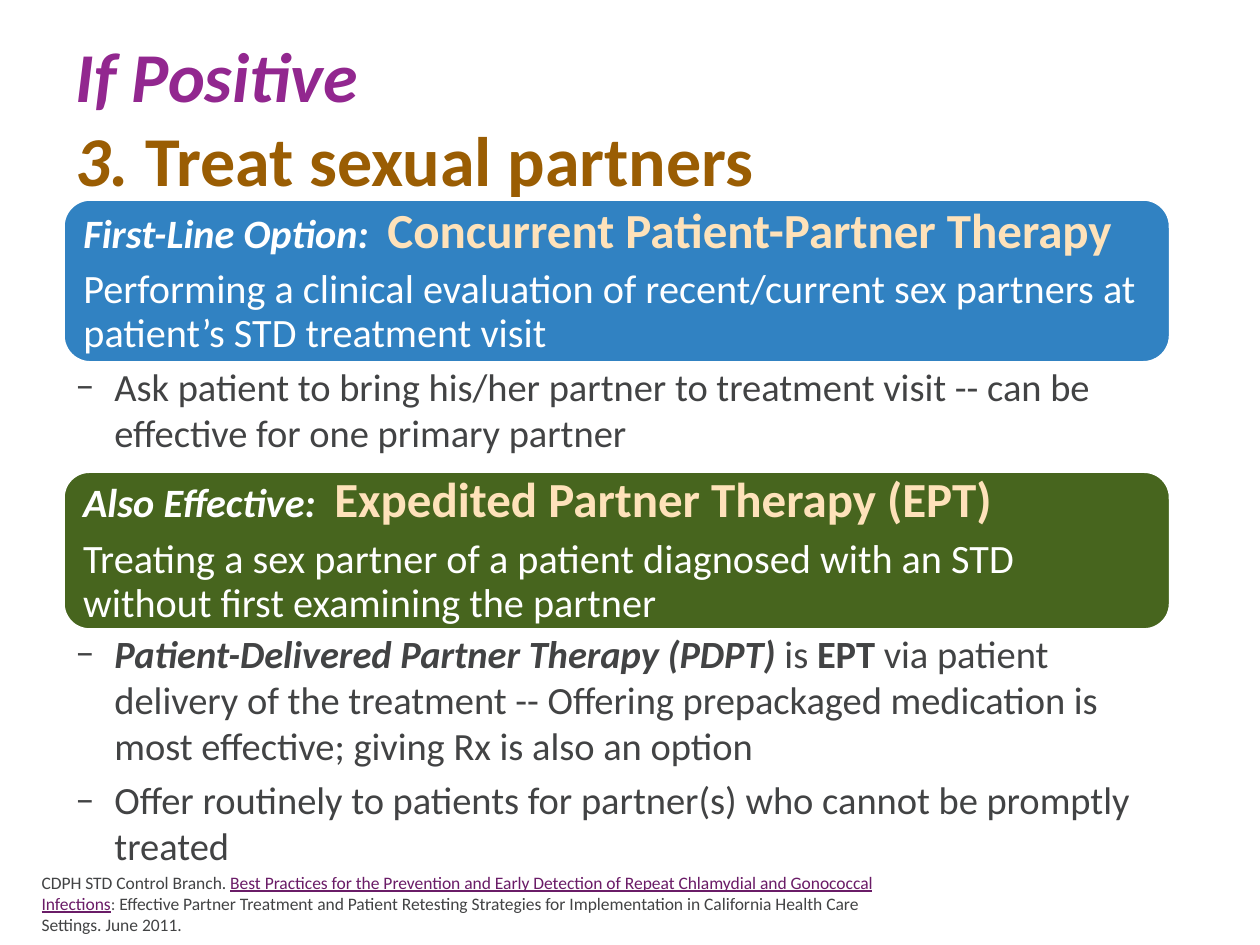
import pptx
import pptx.dml.color
import pptx.enum.shapes
import pptx.enum.text
import pptx.oxml.ns
import pptx.util
from lxml import etree

PX = 9144  # EMU per px, 100 px to the inch
ANCHOR = pptx.enum.text.MSO_ANCHOR
BODY, WHITE, CREAM, BROWN = "424344", "FFFFFF", "FEE2BA", "9A5D03"
BLUE, GREEN, PURPLE = "1B75BC", "47651E", "92278F"
CITED, CITED_COLON = "6A1C67", "595959"


def rgb(color):
    return pptx.dml.color.RGBColor.from_string(color)


def sub(parent, tag, **attributes):
    return etree.SubElement(parent, pptx.oxml.ns.qn(tag), attributes)


def apply(target, formats):
    for name, value in formats.items():
        setattr(target, name, value)


class Deck:
    font_name = "Calibri"

    def __init__(self, width, height):
        self.prs = pptx.Presentation()
        apply(self.prs, {"slide_width": width * PX, "slide_height": height * PX})
        self.slide = self.prs.slides.add_slide(self.prs.slide_layouts[6])

    def frame(self, shape, inset, anchor=ANCHOR.TOP):
        frame = shape.text_frame
        x, y = (side * PX for side in inset)
        apply(frame, {"word_wrap": True, "vertical_anchor": anchor,
                      "margin_left": x, "margin_right": x,
                      "margin_top": y, "margin_bottom": y})
        return frame

    def paragraph(self, frame, runs, first, **formats):
        """Add one paragraph; runs are (text, size, color, other font values)."""
        para = frame.paragraphs[0] if first else frame.add_paragraph()
        apply(para, {"alignment": pptx.enum.text.PP_ALIGN.LEFT, **formats})
        for text, size, color, style in runs:
            lines = text.split("\n")
            for number, line in enumerate(lines):
                if number:
                    para.add_line_break()
                if line:
                    run = para.add_run()
                    run.text = line
                    apply(run.font, {"name": self.font_name,
                                     "size": pptx.util.Pt(size), **style})
                    run.font.color.rgb = rgb(color)
        return para

    def text(self, box, runs, inset=(10, 5), anchor=ANCHOR.TOP):
        shape = self.slide.shapes.add_textbox(*(side * PX for side in box))
        self.paragraph(self.frame(shape, inset, anchor), runs, first=True)

    def dashes(self, box, items):
        shape = self.slide.shapes.add_textbox(*(side * PX for side in box))
        frame = self.frame(shape, (10, 5))
        for number, runs in enumerate(items):
            para = self.paragraph(frame, runs, first=number == 0)
            if number:
                para.space_before = pptx.util.Pt(4.4)
            props = para._p.get_or_add_pPr()
            props.set("marL", str(81 * PX))
            props.set("indent", str(-31 * PX))
            sub(props, "a:buFont", typeface=self.font_name)
            sub(props, "a:buChar", char="–")

    def banner(self, top, height, color, label, option, meaning, opacity=100):
        shape = self.slide.shapes.add_shape(
            pptx.enum.shapes.MSO_SHAPE.ROUNDED_RECTANGLE,
            50 * PX, top * PX, 879 * PX, height * PX)
        shape.shadow.inherit = False
        shape.fill.solid()
        shape.fill.fore_color.rgb = rgb(color)
        if opacity < 100:
            fill = shape._element.spPr.find(".//" + pptx.oxml.ns.qn("a:srgbClr"))
            sub(fill, "a:alpha", val=str(opacity * 1000))
        shape.line.color.rgb = rgb(WHITE)
        shape.line.width = pptx.util.Pt(2)
        frame = self.frame(shape, (10, 10), ANCHOR.MIDDLE)
        heading = [(label + "  ", 23, WHITE, {"bold": True, "italic": True}),
                   (option, 28, CREAM, {"bold": True})]
        for number, runs in enumerate([heading, [(meaning, 23, WHITE, {})]]):
            self.paragraph(frame, runs, first=number == 0, line_spacing=0.9,
                           space_after=pptx.util.Pt(6))


def main():
    deck = Deck(1000, 750)
    bold, bold_italic = {"bold": True}, {"bold": True, "italic": True}

    # Source citation
    deck.text((33, 692, 683, 50), [
        ("CDPH STD Control Branch. ", 10, BODY, {}),
        ("Best Practices for the Prevention and Early Detection of Repeat "
         "Chlamydial and Gonococcal Infections", 10, CITED, {"underline": True}),
        (": ", 10, CITED_COLON, {}),
        ("Effective Partner Treatment and Patient Retesting Strategies for "
         "Implementation in California Health Care Settings. June 2011.",
         10, BODY, {})], inset=(0, 0))

    # Title
    deck.text((50, 30, 575, 125), [
        ("If Positive\n", 40, PURPLE, bold_italic),
        ("3. ", 40, BROWN, bold_italic),
        ("Treat sexual partners", 40, BROWN, bold)], anchor=ANCHOR.MIDDLE)

    # Expedited therapy
    deck.dashes((0, 495, 929, 216), [
        [("Patient-Delivered Partner Therapy (PDPT) ", 22, BODY, bold_italic),
         ("is ", 22, BODY, {}),
         ("EPT", 22, BODY, bold),
         (" via patient delivery of the treatment -- Offering prepackaged "
          "medication is most effective; giving Rx is also an option",
          22, BODY, {})],
        [("Offer routinely to patients for partner(s) who cannot be promptly "
          "treated", 22, BODY, {})]])
    deck.banner(374, 126, GREEN, "Also Effective:",
                "Expedited Partner Therapy (EPT)",
                "Treating a sex partner of a patient diagnosed with an STD "
                "without first examining the partner")

    # Concurrent therapy
    deck.dashes((0, 283, 958, 92), [
        [("Ask patient to bring his/her partner to treatment visit -- can be "
          "effective for one primary partner", 22, BODY, {})]])
    deck.banner(158, 130, BLUE, "First-Line Option:",
                "Concurrent Patient-Partner Therapy",
                "Performing a clinical evaluation of recent/current sex "
                "partners at patient’s STD treatment visit", opacity=90)

    deck.prs.save("out.pptx")


if __name__ == "__main__":
    main()
